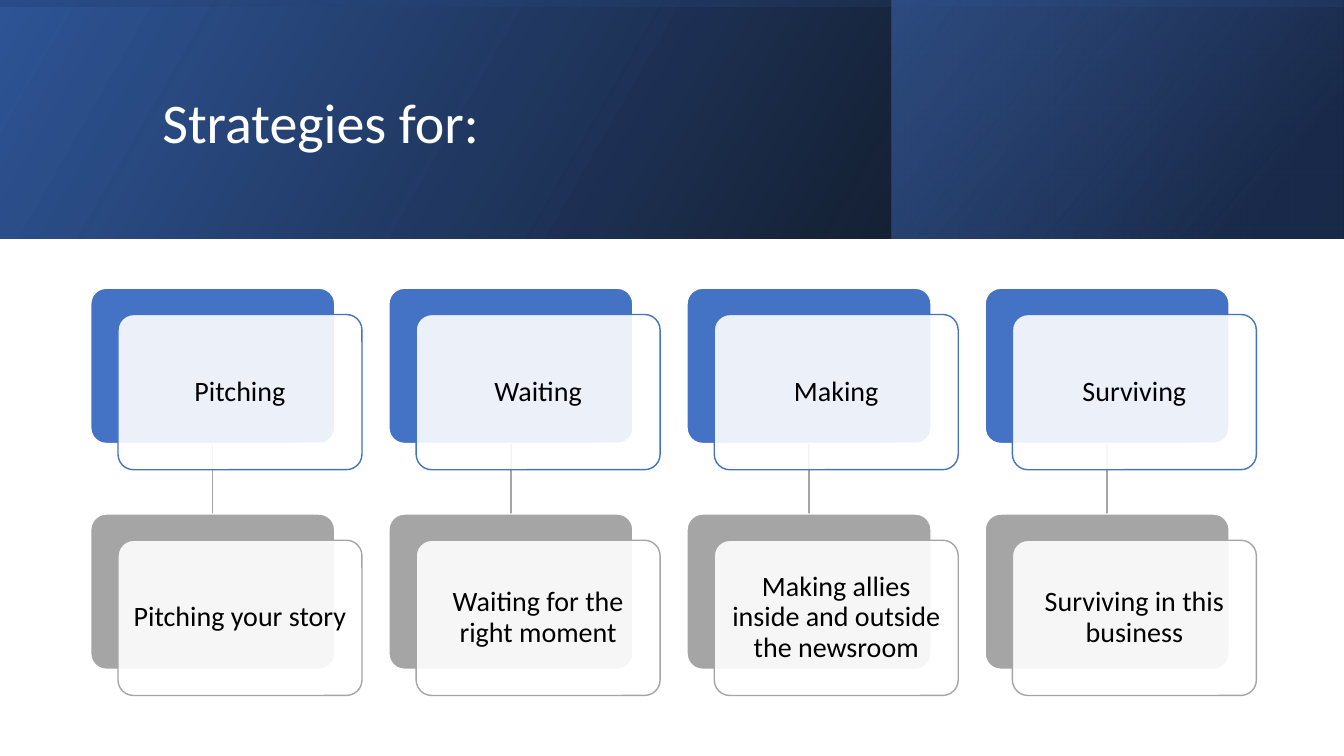
from dataclasses import dataclass

from lxml import etree
from pptx import Presentation
from pptx.dml.color import RGBColor
from pptx.enum.shapes import MSO_CONNECTOR, MSO_SHAPE
from pptx.enum.text import MSO_ANCHOR, PP_ALIGN
from pptx.oxml.ns import qn
from pptx.util import Inches, Pt

RECT, ROUNDED = MSO_SHAPE.RECTANGLE, MSO_SHAPE.ROUNDED_RECTANGLE
STRAIGHT = MSO_CONNECTOR.STRAIGHT
MIDDLE, LEFT, CENTER = MSO_ANCHOR.MIDDLE, PP_ALIGN.LEFT, PP_ALIGN.CENTER
TOP_SIDE, BOTTOM_SIDE = 0, 2

TITLE = "Strategies for:"
STRATEGIES = [
    ("Pitching", "Pitching your story"),
    ("Waiting", "Waiting for the right moment"),
    ("Making", "Making allies inside and outside the newsroom"),
    ("Surviving", "Surviving in this business"),
]


@dataclass(frozen=True)
class Theme:
    font: str = "Calibri"
    title_size: int = 40
    card_size: int = 20
    white: str = "FFFFFF"
    black: str = "000000"
    blue: str = "4472C4"
    deep_blue: str = "2F5597"
    navy: str = "203864"
    gray: str = "A5A5A5"


T = Theme()

# Box, rotation, gradient angle, gradient stops (position, colour, opacity)
BANNER = [
    ((0, 0, 13.33, 2.37), 0, 330, [(0, T.black, 96), (100, T.deep_blue, 100)]),
    ((8.84, 0, 4.48, 2.37), 0, 320, [(19, T.navy, 68), (100, T.blue, 48)]),
    ((5.48, -5.48, 2.37, 13.33), 270, 350, [(23, T.deep_blue, 16), (99, T.black, 45)]),
]
TITLE_BOX = (1.51, 0.38, 10.63, 1.72)
CARD_LEFT, CARD_TOP = 0.9, 2.86
CARD_W, CARD_H = 2.42, 1.54
COLUMN_STEP, ROW_STEP = 2.957, 2.24
FRONT_DX, FRONT_DY = 0.27, 0.26
CARD_INSET = 0.08


def rgb(color):
    return RGBColor.from_string(color)


def inches(box):
    return [Inches(v) for v in box]


def add_color(parent, color, opacity):
    clr = etree.SubElement(parent, qn("a:srgbClr"), val=color)
    etree.SubElement(clr, qn("a:alpha"), val=str(opacity * 1000))


def add_banner_layer(s, box, rotation, angle, stops):
    layer = s.shapes.add_shape(RECT, *inches(box))
    layer.shadow.inherit = False
    layer.rotation = rotation
    layer.line.fill.background()
    sp_pr = layer._element.spPr
    sp_pr.find(qn("a:xfrm")).set("flipH", "1")
    grad = etree.Element(qn("a:gradFill"), rotWithShape="1")
    gs_list = etree.SubElement(grad, qn("a:gsLst"))
    for position, color, opacity in stops:
        gs = etree.SubElement(gs_list, qn("a:gs"), pos=str(position * 1000))
        add_color(gs, color, opacity)
    etree.SubElement(grad, qn("a:lin"), ang=str(angle * 60000), scaled="0")
    sp_pr.find(qn("a:prstGeom")).addnext(grad)


def add_title(s):
    title = s.shapes.title
    title.left, title.top, title.width, title.height = inches(TITLE_BOX)
    title._element.getparent().append(title._element)  # above the banner
    write(title.text_frame, TITLE, T.title_size, T.white, LEFT)


def write(tf, text, size, color, align):
    tf.text = text
    tf.word_wrap = True
    tf.vertical_anchor = MIDDLE
    p = tf.paragraphs[0]
    p.alignment = align
    p.line_spacing = 0.9
    p.font.name, p.font.size = T.font, Pt(size)
    p.font.color.rgb = rgb(color)


def add_link(s):
    link = s.shapes.add_connector(STRAIGHT, 0, 0, 0, 0)
    link.line.color.rgb = rgb(T.gray)
    link.line.width = Pt(1)
    etree.SubElement(link._element.spPr, qn("a:effectLst"))
    return link


def add_rounded(s, left, top, fill, line):
    box = s.shapes.add_shape(ROUNDED, *inches((left, top, CARD_W, CARD_H)))
    box.adjustments[0] = 0.1
    box.shadow.inherit = False
    box.fill.solid()
    box.fill.fore_color.rgb = rgb(fill)
    box.line.color.rgb = rgb(line)
    box.line.width = Pt(1)
    return box


def add_card(s, left, top, text, accent):
    """Add a coloured back plate and a translucent text card; return the plate."""
    plate = add_rounded(s, left, top, accent, T.white)
    front = add_rounded(s, left + FRONT_DX, top + FRONT_DY, T.white, accent)
    white = front._element.spPr.find(qn("a:solidFill")).find(qn("a:srgbClr"))
    etree.SubElement(white, qn("a:alpha"), val="90000")
    tf = front.text_frame
    tf.margin_left = tf.margin_right = Inches(CARD_INSET)
    tf.margin_top = tf.margin_bottom = Inches(CARD_INSET)
    write(tf, text, T.card_size, T.black, CENTER)
    return plate


def main():
    prs = Presentation()
    prs.slide_width, prs.slide_height = Inches(13.33), Inches(7.5)
    s = prs.slides.add_slide(prs.slide_layouts[5])
    for layer in BANNER:
        add_banner_layer(s, *layer)
    add_title(s)

    links = [add_link(s) for _ in STRATEGIES]  # first, so the cards cover them
    for column, (link, texts) in enumerate(zip(links, STRATEGIES)):
        left = CARD_LEFT + column * COLUMN_STEP
        upper, lower = [
            add_card(s, left, CARD_TOP + row * ROW_STEP, text, accent)
            for row, (text, accent) in enumerate(zip(texts, (T.blue, T.gray)))
        ]
        link.begin_connect(upper, BOTTOM_SIDE)
        link.end_connect(lower, TOP_SIDE)

    prs.save("out.pptx")


if __name__ == "__main__":
    main()
